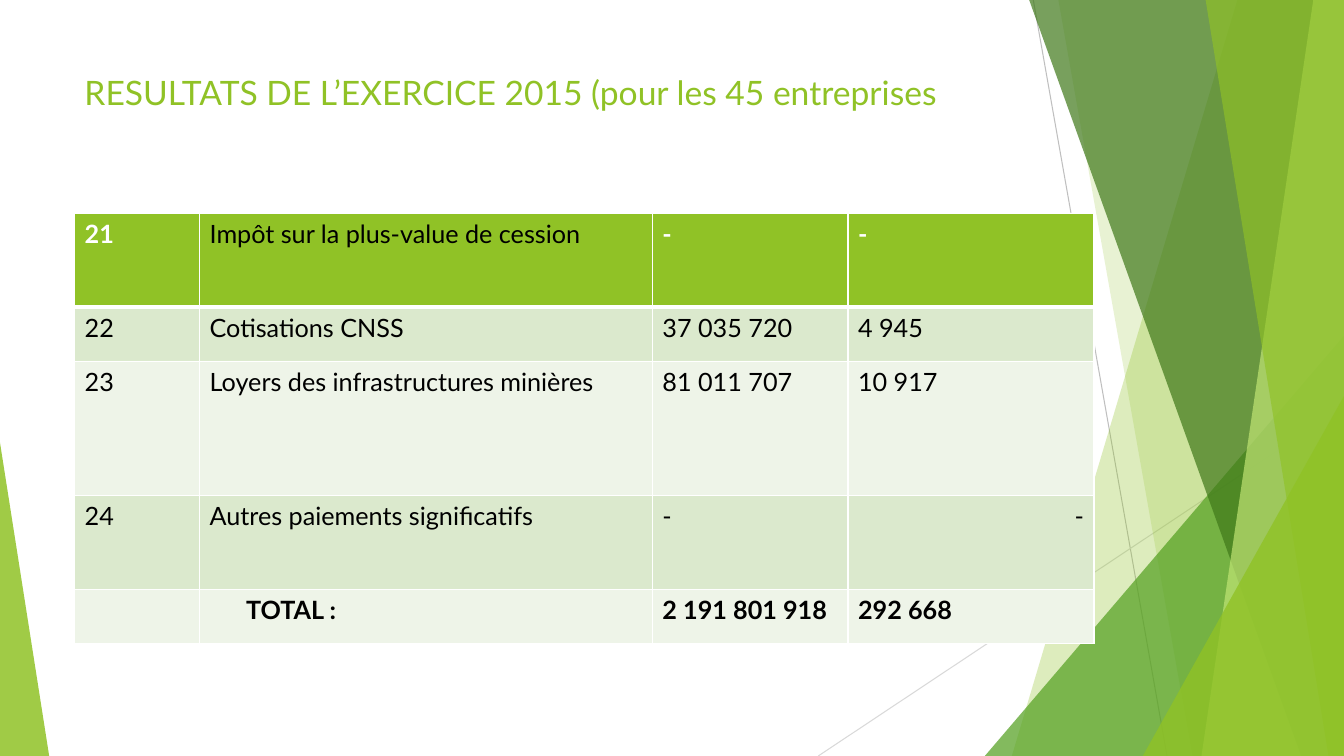
import pptx
import pptx.dml.color
import pptx.enum.shapes
import pptx.enum.text
import pptx.oxml.ns
import pptx.util
from lxml import etree

Cm = pptx.util.Cm
Pt = pptx.util.Pt
qn = pptx.oxml.ns.qn
ALIGN = pptx.enum.text.PP_ALIGN

WIDTH, HEIGHT = 33.87, 19.05
FONT = "Lato"
COLOURS = {
    "lime": "90C226", "green": "54A021", "forest": "3F7819", "pale": "C0E474",
    "grey": "BFBFBF", "silver": "D9D9D9", "white": "FFFFFF", "black": "000000",
    "band": "DBE9CD", "mist": "EEF4E8",
}

RAYS = [((26.04, 0), (29.41, HEIGHT), "grey"),
        ((WIDTH, 10.24), (20.62, HEIGHT), "silver")]

# Each veil runs to the right edge: top left x, bottom left x, colour, opacity
BACK_VEILS = [(31.19, 25.5, "lime", 30), (26.67, 30.05, "lime", 20)]
FRONT_VEILS = [(25.93, 32.79, "forest", 70), (33.1, 30.28, "pale", 70),
               (30.38, 33.48, "lime", 65)]

COLUMNS = [3.15, 11.41, 4.93, 6.2]
ROW_HEIGHTS = [2.36, 1.37, 3.38, 2.36, 1.37]
ROWS = [
    ["21", "Impôt sur la plus-value de cession", "-", "-"],
    ["22", "Cotisations CNSS", "37 035 720", "4 945"],
    ["23", "Loyers des infrastructures minières", "81 011 707", "10 917"],
    ["24", "Autres paiements significatifs", "-", "-"],
    ["", "TOTAL :", "2 191 801 918", "292 668"],
]
TOTAL_ROW = len(ROWS) - 1
TOTAL_INDENT = 1.17


def rgb(name):
    return pptx.dml.color.RGBColor.from_string(COLOURS[name])


def set_all(target, values):
    for name, value in values.items():
        setattr(target, name, value)


def paint(shape, colour, opacity):
    """Give a shape a see-through fill with no line or shadow."""
    shape.shadow.inherit = False
    shape.fill.solid()
    shape.fill.fore_color.rgb = rgb(colour)
    shape.line.fill.background()
    tint = shape.element.spPr.find(qn("a:solidFill")).find(qn("a:srgbClr"))
    etree.SubElement(tint, qn("a:alpha"), val=str(opacity * 1000))


def add_ray(page, start, end, colour):
    ray = page.shapes.add_connector(
        pptx.enum.shapes.MSO_CONNECTOR.STRAIGHT,
        *[Cm(length) for length in start + end])
    ray.line.color.rgb = rgb(colour)
    ray.line.width = Pt(0.75)
    etree.SubElement(ray.element.spPr, qn("a:effectLst"))


def add_veil(page, top_x, bottom_x, colour, opacity):
    corners = [(top_x, -0.02), (WIDTH, -0.02), (WIDTH, HEIGHT), (bottom_x, HEIGHT)]
    points = [(Cm(x), Cm(y)) for x, y in corners]
    builder = page.shapes.build_freeform(*points[0])
    builder.add_line_segments(points[1:], close=True)
    paint(builder.convert_to_shape(), colour, opacity)


def add_corner(page, left, right, top, apex, colour, opacity):
    """Add a triangle that stands on the bottom edge of the slide."""
    corner = page.shapes.add_shape(
        pptx.enum.shapes.MSO_SHAPE.ISOSCELES_TRIANGLE,
        Cm(left), Cm(top), Cm(right - left), Cm(HEIGHT - top))
    corner.adjustments[0] = apex
    paint(corner, colour, opacity)


def write(frame, text, size, colour, bold=False, align=ALIGN.LEFT):
    para = frame.paragraphs[0]
    para.alignment = align
    span = para.add_run()
    span.text = text
    set_all(span.font, {"name": FONT, "size": Pt(size), "bold": bold})
    span.font.color.rgb = rgb(colour)


def add_title(page, text):
    box = page.shapes.add_textbox(Cm(1.88), Cm(1.7), Cm(30.35), Cm(2.13))
    set_all(box.text_frame, {
        "word_wrap": True,
        "vertical_anchor": pptx.enum.text.MSO_ANCHOR.TOP,
    })
    write(box.text_frame, text, 24, "lime")


def add_borders(cell, row):
    widths = {"L": 1, "R": 1, "T": 3 if row == 1 else 1, "B": 3 if row == 0 else 1}
    properties = cell._tc.get_or_add_tcPr()
    for side, width in widths.items():
        edge = etree.SubElement(properties, qn("a:ln" + side), w=str(Pt(width)))
        fill = etree.SubElement(edge, qn("a:solidFill"))
        etree.SubElement(fill, qn("a:srgbClr"), val=COLOURS["white"])


def fill_cell(cell, row, column, text):
    add_borders(cell, row)
    cell.fill.solid()
    background = "lime" if row == 0 else "band" if row % 2 else "mist"
    cell.fill.fore_color.rgb = rgb(background)
    if not text:
        return
    heading = row == 0 and column != 1
    if row == TOTAL_ROW and column == 1:
        cell.margin_left = Cm(TOTAL_INDENT)
    write(cell.text_frame, text, 18, "white" if heading else "black",
          bold=heading or row == TOTAL_ROW,
          align=ALIGN.RIGHT if (row, column) == (3, 3) else ALIGN.LEFT)


def add_results(page):
    table = page.shapes.add_table(
        len(ROWS), len(COLUMNS), Cm(1.88), Cm(5.38),
        Cm(sum(COLUMNS)), Cm(sum(ROW_HEIGHTS))).table
    set_all(table, {"first_row": False, "horz_banding": False})
    for column, width in zip(table.columns, COLUMNS):
        column.width = Cm(width)
    for row, height in zip(table.rows, ROW_HEIGHTS):
        row.height = Cm(height)
    for row, texts in enumerate(ROWS):
        for column, text in enumerate(texts):
            fill_cell(table.cell(row, column), row, column, text)


def main():
    deck = pptx.Presentation()
    set_all(deck, {"slide_width": Cm(WIDTH), "slide_height": Cm(HEIGHT)})
    page = deck.slides.add_slide(deck.slide_layouts[6])
    for ray in RAYS:
        add_ray(page, *ray)
    for veil in BACK_VEILS:
        add_veil(page, *veil)
    add_corner(page, 24.82, WIDTH, 8.46, 1, "green", 72)
    for veil in FRONT_VEILS:
        add_veil(page, *veil)
    add_corner(page, 28.8, WIDTH, 9.98, 1, "lime", 80)
    add_corner(page, 0, 1.24, 11.15, 0, "lime", 85)
    add_title(page, "RESULTATS DE L’EXERCICE 2015 (pour les 45 entreprises")
    add_results(page)
    deck.save("out.pptx")


if __name__ == "__main__":
    main()
